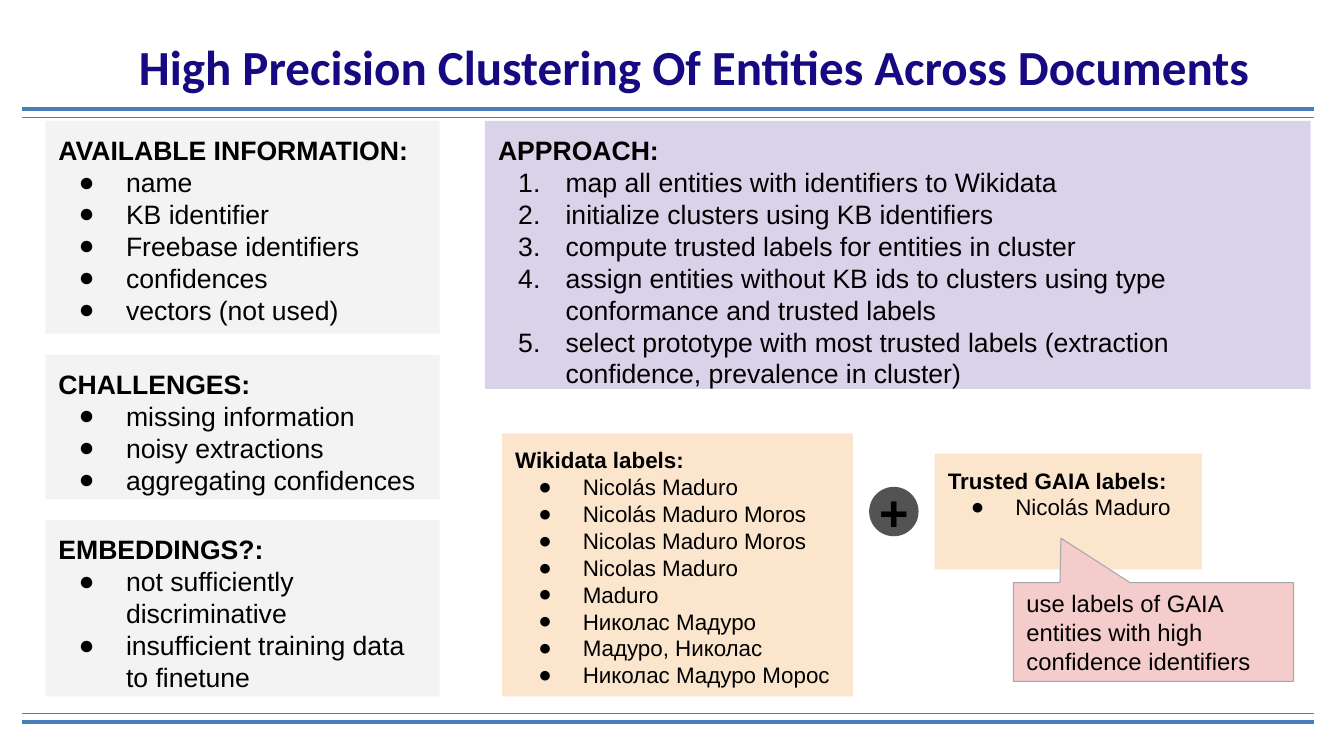
import pptx
import pptx.dml.color
import pptx.enum.shapes
import pptx.enum.text
import pptx.oxml.ns
import pptx.util
import lxml.etree

Inches = pptx.util.Inches
SHAPES = pptx.enum.shapes.MSO_SHAPE
ALIGN = pptx.enum.text.PP_ALIGN
ANCHOR = pptx.enum.text.MSO_ANCHOR

BLACK = "000000"
RULE_BLUE = "4A7EBB"
GREY = "F3F3F3"
LILAC = "D9D2E9"
PEACH = "FCE5CD"
BULLET = ("a:buChar", {"char": "●"})
NUMBER = ("a:buAutoNum", {"type": "arabicPeriod"})


def color(value):
    return pptx.dml.color.RGBColor.from_string(value)


def add_rule(slide, y, weight):
    line = slide.shapes.add_connector(
        pptx.enum.shapes.MSO_CONNECTOR.STRAIGHT,
        Inches(0.22), Inches(y), Inches(13.03), Inches(y))
    line.line.color.rgb = color(RULE_BLUE)
    line.line.width = pptx.util.Pt(weight)
    lxml.etree.SubElement(line._element.spPr, pptx.oxml.ns.qn("a:effectLst"))


def set_frame(shape, inset, anchor):
    frame = shape.text_frame
    frame.word_wrap = True
    frame.auto_size = pptx.enum.text.MSO_AUTO_SIZE.NONE
    frame.vertical_anchor = anchor
    frame.margin_left = frame.margin_right = Inches(inset)
    frame.margin_top = frame.margin_bottom = Inches(inset)


def set_marker(paragraph, marker, hanging):
    properties = paragraph._p.get_or_add_pPr()
    properties.set("marL", str(Inches(0.67)))
    properties.set("indent", str(-Inches(hanging)))
    for tag, attributes in (("a:buFont", {"typeface": "Arial"}), marker):
        lxml.etree.SubElement(properties, pptx.oxml.ns.qn(tag), attributes)


def write(paragraph, text, *, size, bold=False, font="Arial", text_color=BLACK,
          align=ALIGN.LEFT, marker=None, hanging=0.47):
    if marker:
        set_marker(paragraph, marker, hanging)
    paragraph.alignment = align
    paragraph.line_spacing = 1.0
    run = paragraph.add_run()
    run.text = text
    run.font.name = font
    run.font.size = pptx.util.Pt(size)
    run.font.bold = bold
    run.font.color.rgb = color(text_color)


def add_shape(slide, kind, box, fill, *, line=None, inset=0.13, anchor=ANCHOR.TOP):
    shape = slide.shapes.add_shape(kind, *map(Inches, box))
    shape.shadow.inherit = False
    shape.fill.solid()
    shape.fill.fore_color.rgb = color(fill)
    if line:
        shape.line.color.rgb = color(line)
        shape.line.width = pptx.util.Pt(0.75)
    else:
        shape.line.fill.background()
    set_frame(shape, inset, anchor)
    return shape


def add_panel(slide, box, fill, heading, items, *, size=19, marker=BULLET, hanging=0.47):
    frame = add_shape(slide, SHAPES.RECTANGLE, box, fill).text_frame
    write(frame.paragraphs[0], heading, size=size, bold=True)
    for item in items:
        write(frame.add_paragraph(), item, size=size, marker=marker, hanging=hanging)


def add_title(slide, text):
    title = slide.shapes.title
    title.left, title.top, title.width, title.height = map(Inches, (0.45, 0.08, 12.88, 1.15))
    set_frame(title, 0.05, ANCHOR.MIDDLE)
    write(title.text_frame.paragraphs[0], text, size=35, bold=True,
          font="Calibri", text_color="170981", align=ALIGN.CENTER)


def add_plus(slide):
    circle = add_shape(slide, SHAPES.OVAL, (8.62, 4.83, 0.49, 0.49), "535353",
                       inset=0, anchor=ANCHOR.MIDDLE)
    write(circle.text_frame.paragraphs[0], "+", size=36, bold=True, align=ALIGN.CENTER)


def add_callout(slide, text):
    callout = add_shape(slide, SHAPES.RECTANGULAR_CALLOUT, (10.05, 5.78, 2.78, 0.98),
                        "F4CCCC", line="A7A7A7", anchor=ANCHOR.MIDDLE)
    callout.adjustments[0] = -0.33
    callout.adjustments[1] = -0.95
    write(callout.text_frame.paragraphs[0], text, size=17)


def main():
    presentation = pptx.Presentation()
    presentation.slide_width = Inches(13.33)
    presentation.slide_height = Inches(7.5)
    slide = presentation.slides.add_slide(presentation.slide_layouts.get_by_name("Title Only"))

    for y, weight in ((1.08, 3), (1.17, 0.75), (7.08, 0.75), (7.16, 3)):
        add_rule(slide, y, weight)
    add_title(slide, "High Precision Clustering Of Entities Across Documents")

    add_panel(slide, (0.45, 1.2, 3.91, 2.11), GREY, "AVAILABLE INFORMATION:", [
        "name", "KB identifier", "Freebase identifiers", "confidences", "vectors (not used)"])
    add_panel(slide, (0.45, 3.52, 3.91, 1.43), GREY, "CHALLENGES:", [
        "missing information", "noisy extractions", "aggregating confidences"])
    add_panel(slide, (0.45, 5.16, 3.91, 1.75), GREY, "EMBEDDINGS?:", [
        "not sufficiently discriminative", "insufficient training data to finetune"])
    add_panel(slide, (4.81, 1.2, 8.19, 2.66), LILAC, "APPROACH:", [
        "map all entities with identifiers to Wikidata",
        "initialize clusters using KB identifiers",
        "compute trusted labels for entities in cluster",
        "assign entities without KB ids to clusters using type conformance and trusted labels",
        "select prototype with most trusted labels (extraction confidence, prevalence in cluster)",
    ], marker=NUMBER)
    add_panel(slide, (4.98, 4.3, 3.48, 2.61), PEACH, "Wikidata labels:", [
        "Nicolás Maduro", "Nicolás Maduro Moros", "Nicolas Maduro Moros", "Nicolas Maduro",
        "Maduro", "Николас Мадуро", "Мадуро, Николас", "Николас Мадуро Морос",
    ], size=16, hanging=0.44)
    add_panel(slide, (9.27, 4.5, 2.65, 1.15), PEACH, "Trusted GAIA labels:",
              ["Nicolás Maduro"], size=16, hanging=0.44)
    add_plus(slide)
    add_callout(slide, "use labels of GAIA entities with high confidence identifiers")

    presentation.save("out.pptx")


if __name__ == "__main__":
    main()
